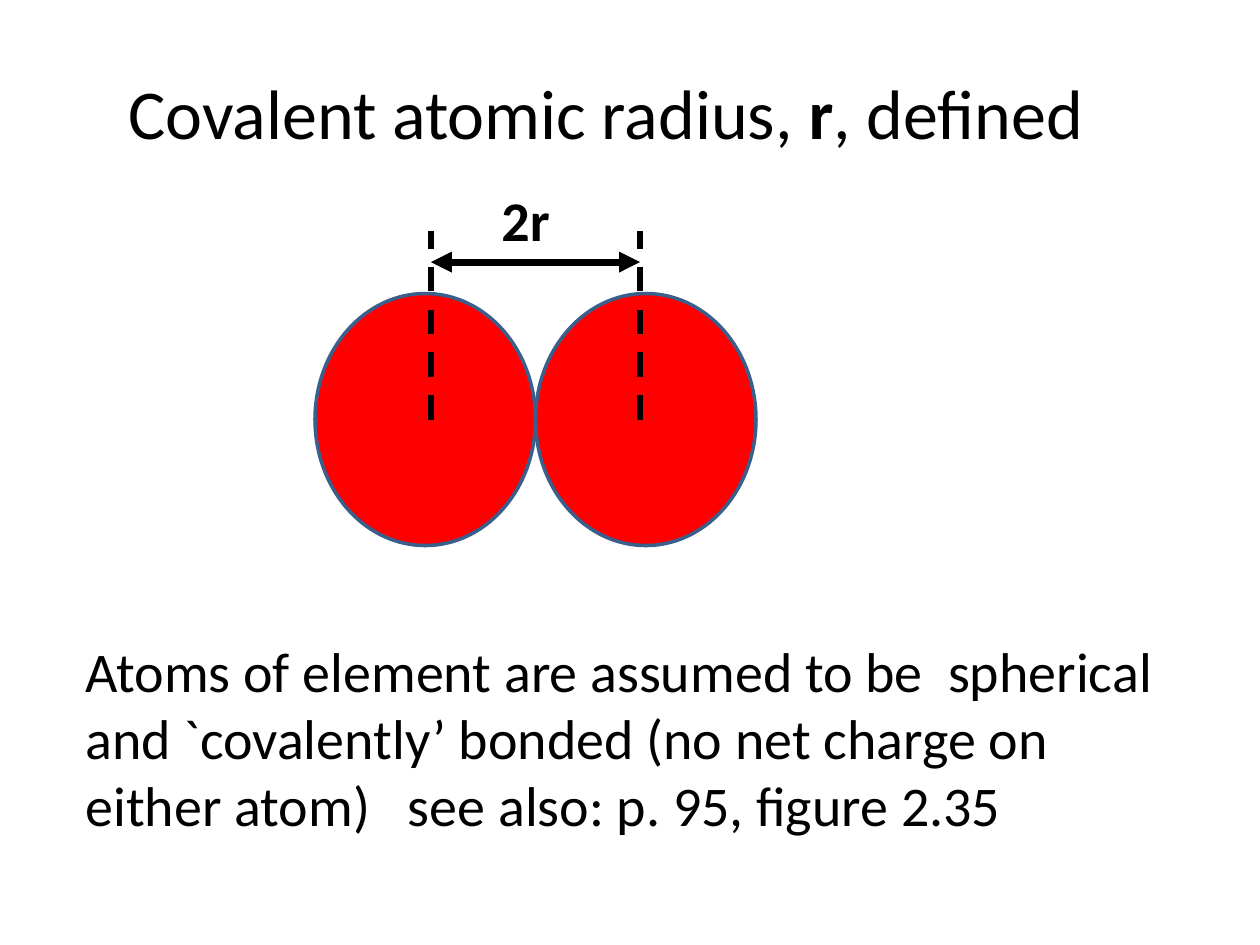
from pptx import Presentation
from pptx.dml.color import RGBColor
from pptx.enum.dml import MSO_LINE
from pptx.enum.shapes import MSO_CONNECTOR, MSO_SHAPE
from pptx.oxml.ns import qn
from pptx.util import Inches, Pt
from lxml import etree

BLACK = RGBColor(0x00, 0x00, 0x00)
RED = RGBColor(0xFF, 0x00, 0x00)
OUTLINE = RGBColor(0x3A, 0x5F, 0x8C)
FONT = "Calibri"
OVAL = MSO_SHAPE.OVAL
STRAIGHT = MSO_CONNECTOR.STRAIGHT
DASH = MSO_LINE.DASH


def add_text(page, left, top, width, height, spans, size, margin_left=0.1):
    """Add one paragraph made of (text, bold) spans."""
    box = page.shapes.add_textbox(
        Inches(left), Inches(top), Inches(width), Inches(height))
    frame = box.text_frame
    frame.word_wrap = True
    frame.margin_left = Inches(margin_left)
    para = frame.paragraphs[0]
    for text, bold in spans:
        span = para.add_run()
        span.text = text
        span.font.name = FONT
        span.font.size = Pt(size)
        span.font.bold = bold
        span.font.color.rgb = BLACK


def add_line(page, start, end, weight, dash=None, arrows=False):
    line = page.shapes.add_connector(
        STRAIGHT, *(Inches(value) for value in (*start, *end)))
    line.line.color.rgb = BLACK
    line.line.width = Pt(weight)
    if dash is not None:
        line.line.dash_style = dash
    if arrows:
        outline = line.line._get_or_add_ln()
        for tag in ("a:headEnd", "a:tailEnd"):
            etree.SubElement(outline, qn(tag), type="triangle")
    etree.SubElement(line._element.spPr, qn("a:effectLst"))


def add_atom(page, left, top, width, height):
    atom = page.shapes.add_shape(
        OVAL, Inches(left), Inches(top), Inches(width), Inches(height))
    atom.shadow.inherit = False
    atom.fill.solid()
    atom.fill.fore_color.rgb = RED
    atom.line.color.rgb = OUTLINE
    atom.line.width = Pt(2)


def add_bonded_atoms(page, left, top, width, height):
    """Two touching atoms with the distance 2r marked between their centres."""
    atom_width = width / 2
    atom_top = top + 0.91
    atom_height = height - 0.91
    for index in range(2):
        add_atom(page, left + index * atom_width, atom_top,
                 atom_width, atom_height)

    # Distance arrow and dashed centre lines
    centres = (left + 0.92, left + 2.58)
    arrow_y = top + 0.66
    add_line(page, (centres[0], arrow_y), (centres[1], arrow_y), 4,
             arrows=True)
    for centre in centres:
        add_line(page, (centre, atom_top + atom_height / 2),
                 (centre, top + 0.41), 3.5, dash=DASH)

    # Distance label
    add_text(page, left + 1.08, top, 1.33, 0.64, [("2r", True)], 32,
             margin_left=0.4)


def build_slide(deck):
    page = deck.slides.add_slide(deck.slide_layouts[6])
    # Title
    add_text(page, 0.92, 0.5, 8.58, 0.77,
             [("Covalent atomic radius, ", False), ("r", True),
              (", defined", False)], 40)
    # Diagram
    add_bonded_atoms(page, 2.5, 1.42, 3.5, 2.91)
    # Explanation
    add_text(page, 0.58, 5, 8.83, 1.72,
             [("Atoms of element are assumed to be  spherical and "
               "`covalently’ bonded (no net charge on either atom)   "
               "see also: p. 95, figure 2.35", False)], 32)


def main():
    deck = Presentation()
    deck.slide_width = Inches(10)
    deck.slide_height = Inches(7.5)
    build_slide(deck)
    deck.save("out.pptx")


if __name__ == "__main__":
    main()
